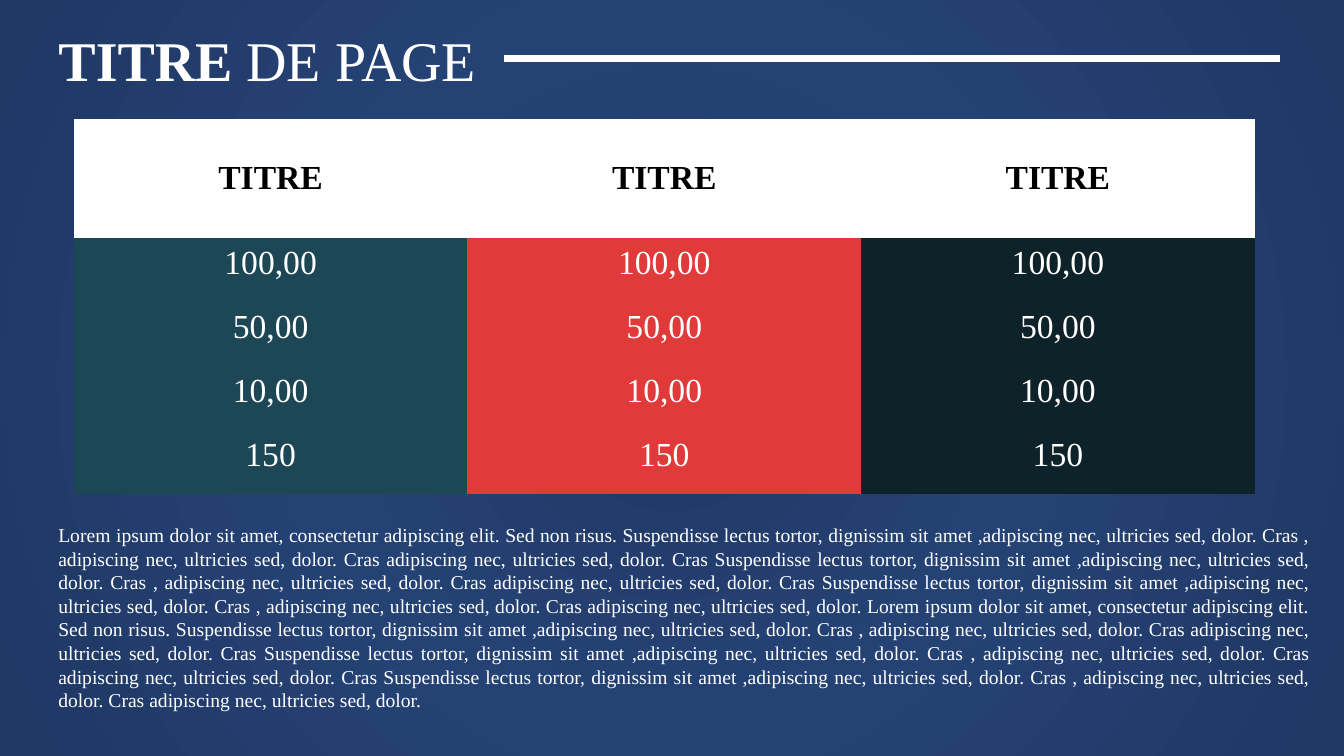
"""Build a title slide with a three-column price table and a paragraph."""
from lxml.etree import SubElement
from pptx import Presentation
from pptx.dml.color import RGBColor
from pptx.enum.shapes import MSO_CONNECTOR
from pptx.enum.text import MSO_ANCHOR, PP_ALIGN
from pptx.oxml.ns import qn
from pptx.util import Cm, Pt

FONT = "Times New Roman"
WHITE = RGBColor(0xFF, 0xFF, 0xFF)
BLACK = RGBColor(0x00, 0x00, 0x00)
NAVY = RGBColor(0x20, 0x38, 0x64)
BLUE = RGBColor(0x25, 0x42, 0x75)
TEAL = RGBColor(0x1E, 0x47, 0x56)
RED = RGBColor(0xE0, 0x3A, 0x3A)
DARK = RGBColor(0x0E, 0x22, 0x29)

COLUMN_FILLS = (TEAL, RED, DARK)
ROW_TEXTS = ("TITRE", "100,00", "50,00", "10,00", "150")
PLAIN_TABLE_STYLE = "{2D5ABB26-0587-4C30-8999-92F81FD0307C}"

OPENING = "Lorem ipsum dolor sit amet, consectetur adipiscing elit. Sed non risus. "
SENTENCES = (
    "Suspendisse lectus tortor, dignissim sit amet ,adipiscing nec, ultricies sed, dolor. "
    "Cras , adipiscing nec, ultricies sed, dolor. "
    "Cras adipiscing nec, ultricies sed, dolor. "
)
BODY = ((OPENING + "Cras ".join([SENTENCES] * 3)) * 2).strip()


def style_paragraph(para, size, color, align, bold=None):
    para.alignment = align
    font = para.font
    font.name, font.size, font.bold = FONT, Pt(size), bold
    font.color.rgb = color


def set_background(page):
    page.background.fill.gradient()
    gradient = page.element.find(".//" + qn("a:gradFill"))
    for child in list(gradient):
        gradient.remove(child)
    stops = SubElement(gradient, qn("a:gsLst"))
    for percent, color in ((0, NAVY), (46, BLUE), (100, NAVY)):
        stop = SubElement(stops, qn("a:gs"), pos=str(percent * 1000))
        SubElement(stop, qn("a:srgbClr"), val=str(color))
    circle = SubElement(gradient, qn("a:path"), path="circle")
    SubElement(circle, qn("a:fillToRect"), l="50000", t="50000", r="50000", b="50000")


def add_title(page):
    title = page.shapes.title
    title.left, title.top, title.width, title.height = Cm(1.22), Cm(0.51), Cm(11.48), Cm(1.96)
    frame = title.text_frame
    frame.word_wrap = False
    frame.vertical_anchor = MSO_ANCHOR.MIDDLE
    para = frame.paragraphs[0]
    style_paragraph(para, 40, WHITE, PP_ALIGN.LEFT)
    for text, bold in (("TITRE ", True), ("DE PAGE", False)):
        span = para.add_run()
        span.text = text
        span.font.bold = bold


def add_rule(page):
    rule = page.shapes.add_connector(
        MSO_CONNECTOR.STRAIGHT, Cm(12.7), Cm(1.47), Cm(32.26), Cm(1.47)
    )
    rule.line.color.rgb = WHITE
    rule.line.width = Pt(5)
    SubElement(rule.element.spPr, qn("a:effectLst"))


def fill_cell(cell, text, fill, color, bold):
    cell.fill.solid()
    cell.fill.fore_color.rgb = fill
    cell.margin_left = cell.margin_right = Cm(0.33)
    cell.margin_top = cell.margin_bottom = Cm(0.17)
    cell.vertical_anchor = MSO_ANCHOR.MIDDLE if bold else MSO_ANCHOR.TOP
    cell.text = text
    style_paragraph(cell.text_frame.paragraphs[0], 24, color, PP_ALIGN.CENTER, bold)


def add_price_table(page):
    frame = page.shapes.add_table(
        len(ROW_TEXTS), len(COLUMN_FILLS), Cm(1.86), Cm(3), Cm(29.76), Cm(9.4)
    )
    table = frame.table
    frame.element.find(".//" + qn("a:tableStyleId")).text = PLAIN_TABLE_STYLE
    for column in table.columns:
        column.width = Cm(9.92)
    for index, text in enumerate(ROW_TEXTS):
        heading = index == 0
        table.rows[index].height = Cm(3) if heading else Cm(1.61)
        for cell, fill in zip(table.rows[index].cells, COLUMN_FILLS):
            if heading:
                fill_cell(cell, text, WHITE, BLACK, True)
            else:
                fill_cell(cell, text, fill, WHITE, False)


def add_body(page):
    box = page.shapes.add_textbox(Cm(1.22), Cm(13.06), Cm(32.08), Cm(5.05))
    frame = box.text_frame
    frame.word_wrap = True
    frame.text = BODY
    style_paragraph(frame.paragraphs[0], 14, WHITE, PP_ALIGN.JUSTIFY)


def main():
    deck = Presentation()
    deck.slide_width, deck.slide_height = Cm(33.87), Cm(19.05)
    page = deck.slides.add_slide(deck.slide_layouts.get_by_name("Title Only"))
    set_background(page)
    add_body(page)
    add_price_table(page)
    add_title(page)
    add_rule(page)
    deck.save("out.pptx")


if __name__ == "__main__":
    main()
